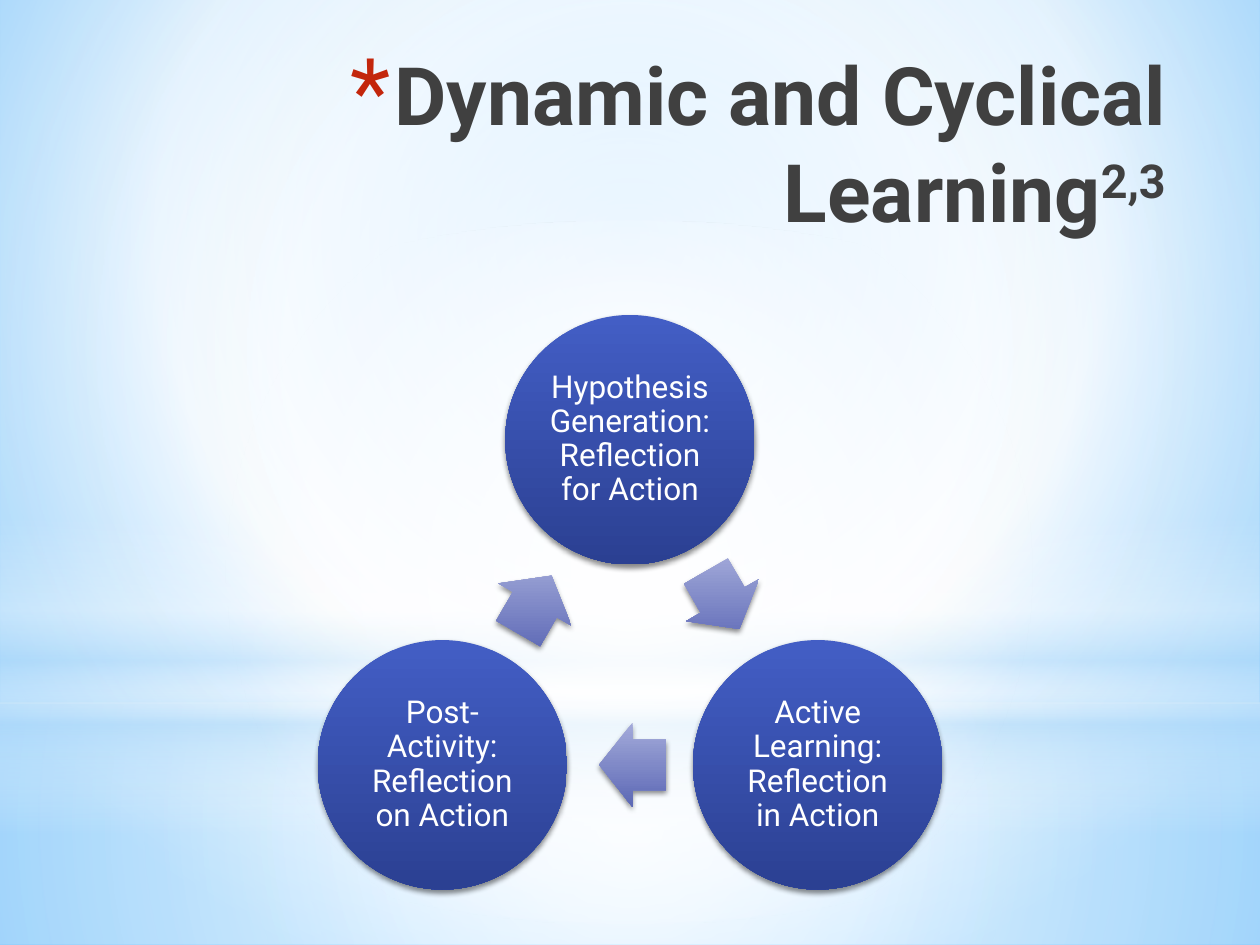
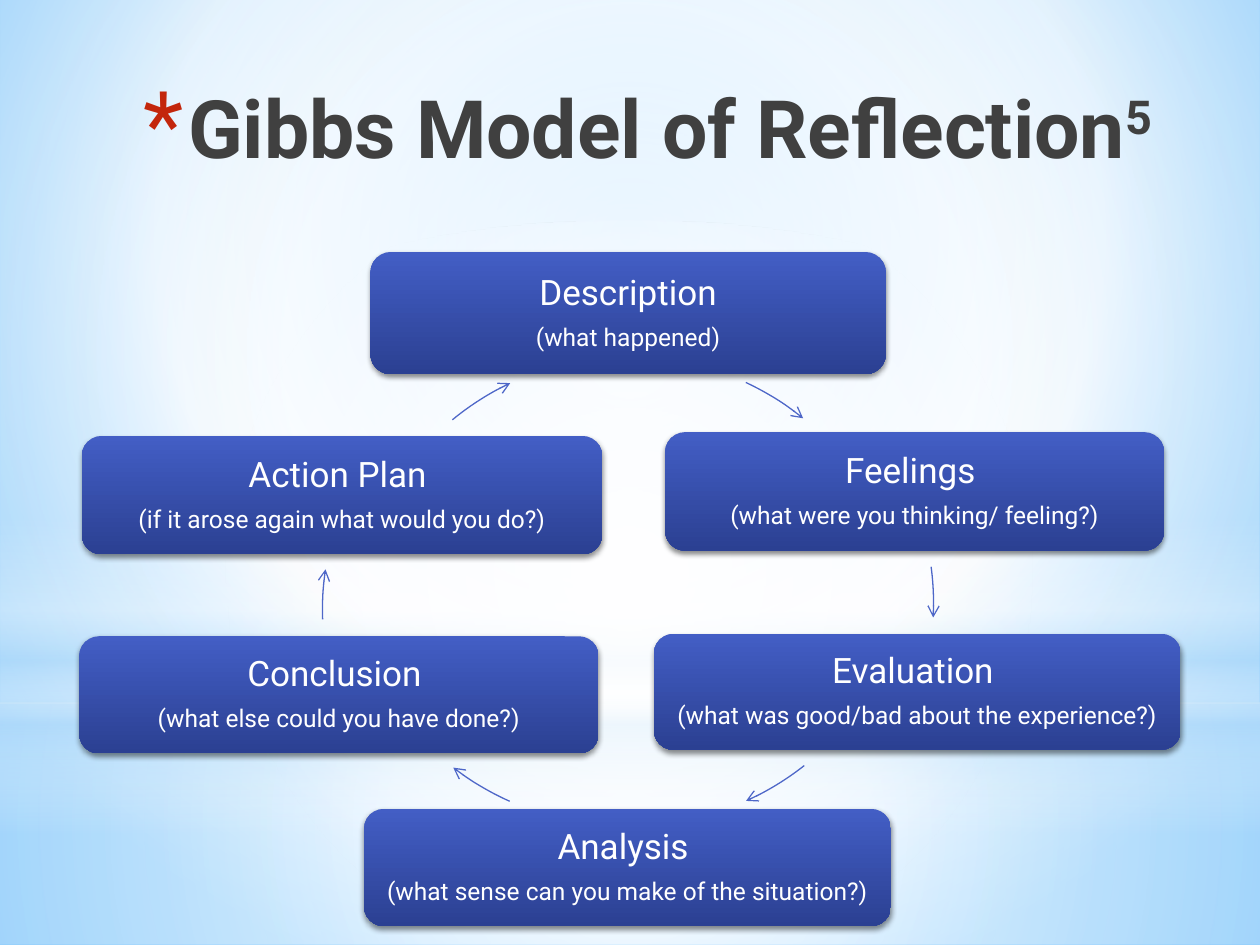
from dataclasses import dataclass
from math import cos, radians, sin

from lxml.etree import SubElement
from pptx import Presentation
from pptx.dml.color import RGBColor
from pptx.enum.shapes import MSO_SHAPE
from pptx.enum.text import MSO_ANCHOR, PP_ALIGN
from pptx.oxml.ns import qn
from pptx.util import Inches, Pt


@dataclass(frozen=True)
class Theme:
    font: str = "Roboto"
    title: str = "404040"
    bullet: str = "C3260C"
    text: str = "FFFFFF"
    line: str = "4E67C8"
    title_size: int = 46
    head_size: int = 20
    circle_size: int = 18
    note_size: int = 14
    node: tuple = ((0, "435EC5"), (100, "2B4092"))
    arrow: tuple = ((0, "A4ABDA"), (100, "5C68B5"))
    sky: tuple = ((0, "9ED5FF"), (60, "FFFFFF"), (100, "5BB9FF"))
    floor: tuple = ((0, "FFFFFF", 91), (37, "FFFFFF", 76), (100, "B4DCFA", 79))
    wall: tuple = ((0, "FFFFFF", 89), (48, "FFFFFF", 62), (100, "B4DCFA", 79))
    horizon: tuple = ((0, "FFFFFF", 0), (29, "FFFFFF", 30), (45, "B4DCFA", 40),
                      (55, "FFFFFF", 26), (65, "B4DCFA", 60), (100, "FFFFFF", 0))
    glow: tuple = ((0, "FFFFFF"), (56, "FFFFFF", 0))


CENTRE = (50, 50, 50, 50)


def add(parent, tag, **attrs):
    return SubElement(parent, qn(tag), {k: str(v) for k, v in attrs.items()})


def apply(target, values):
    for name, value in values.items():
        setattr(target, name, value)


class Deck:
    def __init__(self, theme):
        self.theme = theme
        self.prs = Presentation()
        self.prs.slide_width, self.prs.slide_height = Inches(10), Inches(7.5)
        self.s = None

    def gradient(self, fill, element, stops, focus=None):
        fill.gradient()
        grad = next(element.iter(qn("a:gradFill")))
        grad.set("rotWithShape", "0")
        for child in list(grad):
            grad.remove(child)
        gs_list = add(grad, "a:gsLst")
        for pos, color, *alpha in stops:
            clr = add(add(gs_list, "a:gs", pos=pos * 1000), "a:srgbClr", val=color)
            for value in alpha:
                add(clr, "a:alpha", val=value * 1000)
        if focus:
            shade = add(grad, "a:path", path="circle")
            add(shade, "a:fillToRect", **{k: v * 1000 for k, v in zip("ltrb", focus)})
        else:
            add(grad, "a:lin", ang=5400000, scaled=0)

    def shape(self, kind, box, stops, focus=None, shadow=False):
        sp = self.s.shapes.add_shape(kind, *map(Inches, box))
        self.gradient(sp.fill, sp._element.spPr, stops, focus)
        sp.line.fill.background()
        sp.shadow.inherit = False
        if shadow:
            effects = sp._element.spPr.find(qn("a:effectLst"))
            outer = add(effects, "a:outerShdw", blurRad=Pt(3.1), dist=Pt(1.8),
                        dir=5400000, rotWithShape=0)
            add(add(outer, "a:srgbClr", val="000000"), "a:alpha", val=45000)
        return sp

    def run(self, p, text, size, color, bold=False):
        r = p.add_run()
        r.text = text
        apply(r.font, {"name": self.theme.font, "size": Pt(size), "bold": bold})
        r.font.color.rgb = RGBColor.from_string(color)
        return r

    def slide(self, title, note, box):
        t = self.theme
        self.s = self.prs.slides.add_slide(self.prs.slide_layouts[6])
        bg = self.s.background.fill
        self.gradient(bg, self.s._element, t.sky, (20, 10, 20, 60))
        rect, oval = MSO_SHAPE.RECTANGLE, MSO_SHAPE.OVAL
        self.shape(rect, (0, 5.58, 10, 1.92), t.floor, CENTRE)
        self.shape(rect, (0, 0, 10, 5.58), t.wall, CENTRE)
        self.shape(rect, (0, 4.12, 10, 2.5), t.horizon)
        self.shape(oval, (0, 1.75, 10, 5.58), t.glow, CENTRE)

        tf = self.s.shapes.add_textbox(*map(Inches, box)).text_frame
        tf.word_wrap = True
        p = tf.paragraphs[0]
        p.alignment = PP_ALIGN.RIGHT
        pPr = p._p.get_or_add_pPr()
        pPr.set("marL", str(Inches(0.35)))
        pPr.set("indent", str(Inches(-0.35)))
        add(add(pPr, "a:buClr"), "a:srgbClr", val=t.bullet)
        add(pPr, "a:buSzPct", val=116000)
        add(pPr, "a:buFont", typeface=t.font)
        add(pPr, "a:buChar", char="*")
        self.run(p, title, t.title_size, t.title, True)
        r = self.run(p, note, t.title_size, t.title, True)
        r.font._element.set("baseline", "30000")

    def node(self, kind, box, lines, inset):
        tf = self.shape(kind, box, self.theme.node, shadow=True).text_frame
        sides = ("left", "top", "right", "bottom")
        apply(tf, {f"margin_{side}": Inches(inset) for side in sides})
        apply(tf, {"word_wrap": True, "vertical_anchor": MSO_ANCHOR.MIDDLE})
        for i, (text, size) in enumerate(lines):
            p = tf.add_paragraph() if i else tf.paragraphs[0]
            apply(p, {"alignment": PP_ALIGN.CENTER, "line_spacing": 0.9,
                      "space_after": Pt(size * 0.35)})
            self.run(p, text, size, self.theme.text)

    def block_arrow(self, cx, cy, rotation):
        w, h = 0.53, 0.67
        box = (cx - w / 2, cy - h / 2, w, h)
        sp = self.shape(MSO_SHAPE.RIGHT_ARROW, box, self.theme.arrow, shadow=True)
        sp.rotation = rotation
        sp.adjustments[0], sp.adjustments[1] = 0.6, 0.5

    def arc_arrow(self, left, top, start, end, size=4.4):
        radius, side = Inches(size / 2), Inches(size)
        (x1, y1), (x2, y2) = [(int(radius * (1 + cos(a))), int(radius * (1 + sin(a))))
                              for a in (radians(start), radians(end))]
        builder = self.s.shapes.build_freeform(x1, y1)
        builder.add_line_segments([(x2, y2)], close=False)
        sp = builder.convert_to_shape()
        apply(sp, {"left": Inches(left), "top": Inches(top),
                   "width": side, "height": side})
        outline = next(sp._element.iter(qn("a:path")))
        apply(outline, {"w": side, "h": side})
        for child in list(outline):
            outline.remove(child)
        add(add(outline, "a:moveTo"), "a:pt", x=x1, y=y1)
        add(outline, "a:arcTo", wR=radius, hR=radius, stAng=round(start % 360 * 60000),
            swAng=round((end - start) * 60000))
        sp.fill.background()
        sp.shadow.inherit = False
        sp.line.color.rgb = RGBColor.from_string(self.theme.line)
        sp.line.width = Pt(0.75)
        add(sp.line._get_or_add_ln(), "a:tailEnd", type="arrow")


def learning_cycle(deck):
    deck.slide("Dynamic and Cyclical Learning", "2,3", (0.82, 0.31, 8.53, 1.72))
    stages = ("Hypothesis Generation: Reflection for Action",
              "Active Learning: Reflection in Action",
              "Post-Activity: Reflection on Action")
    cx, cy, ring, size, setback = 5, 5.21, 1.72, 1.98, 0.02
    for i, stage in enumerate(stages):
        a = radians(120 * i - 90)
        box = (cx + ring * cos(a) - size / 2, cy + ring * sin(a) - size / 2, size, size)
        deck.node(MSO_SHAPE.OVAL, box, [(stage, deck.theme.circle_size)], 0.03)
        mid, heading = radians(120 * i - 30), 120 * i + 60
        h = radians(heading)
        deck.block_arrow(cx + ring / 2 * cos(mid) - setback * cos(h),
                         cy + ring / 2 * sin(mid) - setback * sin(h), heading)


def gibbs_model(deck):
    deck.slide("Gibbs Model of Reflection", "5", (0.66, 0.57, 8.58, 1.25))
    steps = (
        ("Description", "(what happened)",
         (2.94, 2, 4.09, 0.97), (2.79, 2.83, -65, -51)),
        ("Feelings ", "(what were you thinking/ feeling?)",
         (5.28, 3.43, 3.96, 0.94), (3.01, 2.59, -7.6, 2.9)),
        ("Evaluation ", "(what was good/bad about the experience?)",
         (5.19, 5.03, 4.18, 0.92), (2.82, 2.15, 51.7, 65.8)),
        ("Analysis ", "(what sense can you make of the situation?)",
         (2.89, 6.42, 4.18, 0.93), (2.74, 2.15, 114, 127.6)),
        ("Conclusion ", "(what else could you have done?)",
         (0.63, 5.05, 4.12, 0.93), (2.56, 2.64, 178, 188.4)),
        ("Action Plan ", "(if it arose again what would you do?)",
         (0.65, 3.46, 4.13, 0.94), (2.79, 2.83, 230.5, 244.7)),
    )
    t = deck.theme
    for name, question, box, arc in steps:
        lines = [(name, t.head_size), (question, t.note_size)]
        deck.node(MSO_SHAPE.ROUNDED_RECTANGLE, box, lines, 0.08)
        deck.arc_arrow(*arc)


def main():
    deck = Deck(Theme())
    learning_cycle(deck)
    gibbs_model(deck)
    deck.prs.save("out.pptx")


if __name__ == "__main__":
    main()
